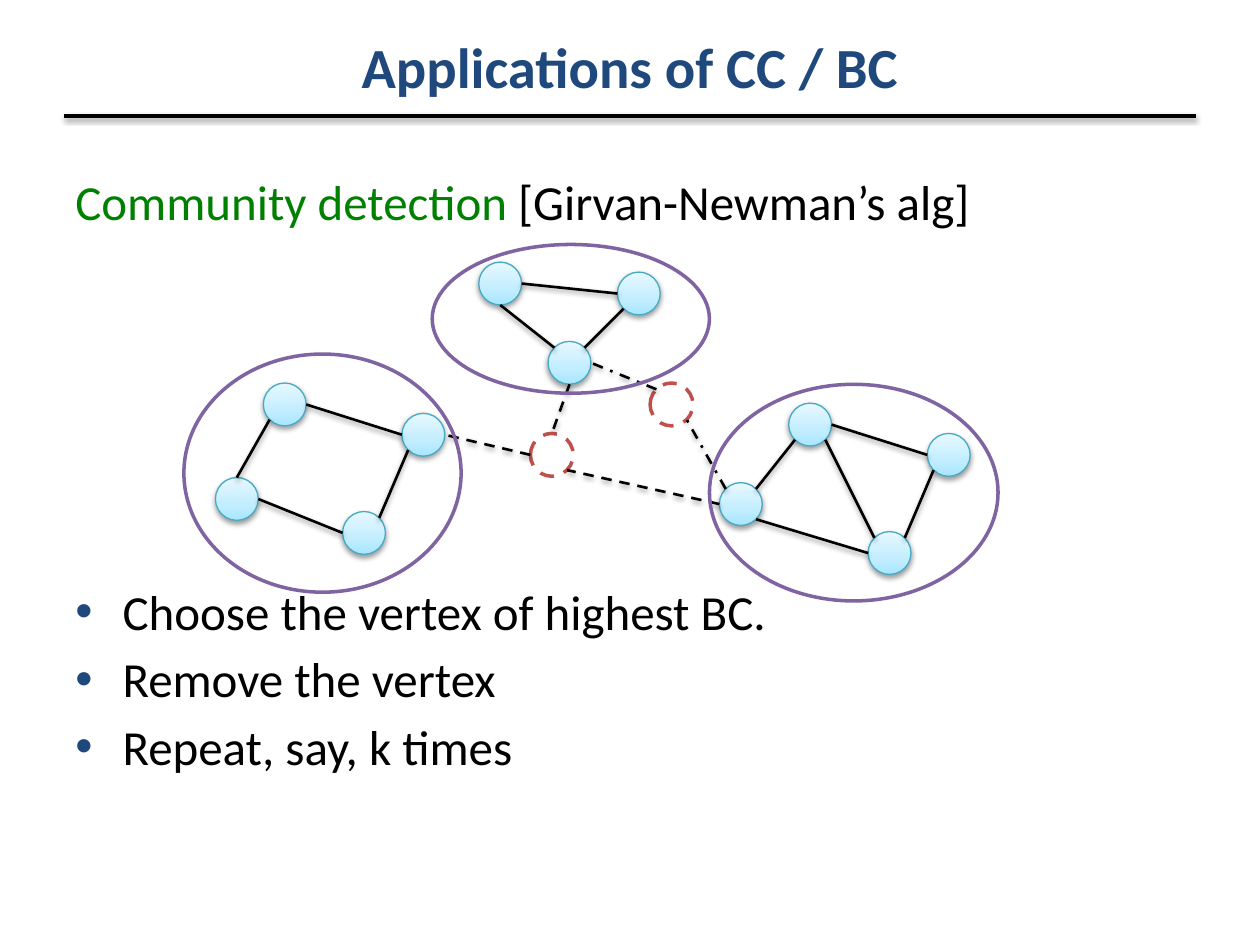
from math import cos, radians, sin

from pptx import Presentation
from pptx.dml.color import RGBColor
from pptx.enum.dml import MSO_LINE
from pptx.enum.shapes import MSO_CONNECTOR, MSO_SHAPE
from pptx.enum.text import MSO_ANCHOR, PP_ALIGN
from pptx.oxml import parse_xml
from pptx.oxml.ns import nsdecls
from pptx.util import Pt

NAVY = RGBColor(0x1F, 0x49, 0x7D)
GREEN = RGBColor(0x00, 0x80, 0x00)
BLACK = RGBColor(0x00, 0x00, 0x00)
WHITE = RGBColor(0xFF, 0xFF, 0xFF)
TEAL = RGBColor(0x46, 0xAA, 0xC5)
RED = RGBColor(0xC0, 0x50, 0x4D)
PURPLE = RGBColor(0x80, 0x64, 0xA2)
SKY_STOPS = (
    (0, RGBColor(0xA7, 0xE6, 0xFF)),
    (35, RGBColor(0xC1, 0xED, 0xFF)),
    (100, RGBColor(0xE7, 0xF8, 0xFF)),
)

DIAMETER = 24.5
COMPASS = {"E": 0, "SE": 45, "S": 90, "SW": 135, "W": 180, "NW": 225, "N": 270, "NE": 315}

VERTICES = {
    "left_low": (123.1, 272.9),
    "left_bottom": (195.8, 292.3),
    "left_top": (150.5, 218.9),
    "left_gate": (229.7, 236.2),
    "top_left": (273.6, 149.8),
    "top_right": (352.8, 155.5),
    "top_gate": (313.2, 195.1),
    "right_gate": (411.1, 275.8),
    "right_bottom": (496.1, 303.8),
    "right_top": (450.7, 230.4),
    "right_east": (529.9, 247.7),
}
REMOVED = {"middle": (303.1, 247.7), "upper": (371.5, 218.9)}
EDGES = {
    MSO_LINE.SOLID: (
        ("left_low", "E", "left_bottom", "W"),
        ("left_top", "SW", "left_low", "N"),
        ("left_top", "E", "left_gate", "W"),
        ("left_gate", "SW", "left_bottom", "NE"),
        ("top_gate", "NW", "top_left", "S"),
        ("top_right", "W", "top_left", "E"),
        ("top_right", "SW", "top_gate", "NE"),
        ("right_gate", "SE", "right_bottom", "W"),
        ("right_top", "SW", "right_gate", "NE"),
        ("right_top", "E", "right_east", "W"),
        ("right_east", "SW", "right_bottom", "NE"),
        ("right_bottom", "NW", "right_top", "SE"),
    ),
    MSO_LINE.DASH: (
        ("top_gate", "S", "middle", "N"),
        ("right_gate", "W", "middle", "SE"),
        ("middle", "W", "left_gate", "E"),
    ),
    MSO_LINE.DASH_DOT: (
        ("upper", "NW", "top_gate", "E"),
        ("right_gate", "NW", "upper", "SE"),
    ),
}
COMMUNITIES = (
    (105.1, 202.3, 158.4, 136.1),
    (247, 139.7, 158.4, 85),
    (405.4, 219.6, 164.9, 123.8),
)
STEPS = ("Choose the vertex of highest BC.", "Remove the vertex", "Repeat, say, k times")


class SlideBuilder:
    font = "Calibri"
    body_size = 28

    def __init__(self, page):
        self.page = page

    def add_shadow(self, shape):
        shape._element.spPr.append(parse_xml(
            f'<a:effectLst {nsdecls("a")}><a:outerShdw blurRad="39370" dist="20320" '
            'dir="5400000" rotWithShape="0"><a:srgbClr val="000000">'
            '<a:alpha val="38000"/></a:srgbClr></a:outerShdw></a:effectLst>'))

    def add_text(self, left, top, width, height):
        box = self.page.shapes.add_textbox(Pt(left), Pt(top), Pt(width), Pt(height))
        box.text_frame.word_wrap = True
        return box.text_frame

    def style_span(self, span, size, color, bold=False):
        span.font.name = self.font
        span.font.size = Pt(size)
        span.font.color.rgb = color
        span.font.bold = bold

    def add_title(self, text):
        frame = self.add_text(36, 15.8, 648, 43.9)
        frame.text = text
        frame.vertical_anchor = MSO_ANCHOR.MIDDLE
        para = frame.paragraphs[0]
        para.alignment = PP_ALIGN.CENTER
        self.style_span(para.runs[0], 32.4, NAVY, True)

    def add_body(self, heading, steps):
        frame = self.add_text(36, 94.3, 648, 388.1)
        para = frame.paragraphs[0]
        for text, color in heading:
            span = para.add_run()
            span.text = text
            self.style_span(span, self.body_size, color)
        for index, step in enumerate(steps):
            para = frame.add_paragraph()
            para.text = step
            para.space_before = Pt(5 if index else 200.7)
            self.style_span(para.runs[0], self.body_size, BLACK)
            self.add_bullet(para)

    def add_bullet(self, para):
        properties = para._p.get_or_add_pPr()
        properties.set("marL", str(Pt(27)))
        properties.set("indent", str(Pt(-27)))
        for xml in (
            f'<a:buClr {nsdecls("a")}><a:srgbClr val="{NAVY}"/></a:buClr>',
            f'<a:buFont {nsdecls("a")} typeface="Arial"/>',
            f'<a:buChar {nsdecls("a")} char="•"/>',
        ):
            properties.append(parse_xml(xml))

    def add_line(self, start, end, width=1.5, dash=MSO_LINE.SOLID):
        line = self.page.shapes.add_connector(
            MSO_CONNECTOR.STRAIGHT, *(Pt(value) for value in (*start, *end)))
        line.line.color.rgb = BLACK
        line.line.width = Pt(width)
        line.line.dash_style = dash
        self.add_shadow(line)

    def add_ellipse(self, left, top, width, height, color, line_width=2):
        ellipse = self.page.shapes.add_shape(
            MSO_SHAPE.OVAL, Pt(left), Pt(top), Pt(width), Pt(height))
        ellipse.fill.background()
        ellipse.line.color.rgb = color
        ellipse.line.width = Pt(line_width)
        return ellipse

    def add_community(self, left, top, width, height):
        self.add_ellipse(left, top, width, height, PURPLE).shadow.inherit = False

    def add_vertex(self, left, top):
        vertex = self.add_ellipse(left, top, DIAMETER, DIAMETER, TEAL, 0.75)
        stops = "".join(
            f'<a:gs pos="{position * 1000}"><a:srgbClr val="{color}"/></a:gs>'
            for position, color in SKY_STOPS)
        properties = vertex._element.spPr
        properties.replace(properties.find("{*}noFill"), parse_xml(
            f'<a:gradFill {nsdecls("a")} rotWithShape="1"><a:gsLst>{stops}</a:gsLst>'
            '<a:lin ang="16200000" scaled="0"/></a:gradFill>'))
        self.add_shadow(vertex)

    def add_removed_vertex(self, left, top):
        vertex = self.add_ellipse(left, top, DIAMETER, DIAMETER, RED)
        vertex.fill.solid()
        vertex.fill.fore_color.rgb = WHITE
        vertex.line.dash_style = MSO_LINE.DASH
        vertex.shadow.inherit = False


def rim_point(name, direction):
    left, top = (VERTICES | REMOVED)[name]
    angle = radians(COMPASS[direction])
    radius = DIAMETER / 2
    return left + radius * (1 + cos(angle)), top + radius * (1 + sin(angle))


def main():
    deck = Presentation()
    deck.slide_width, deck.slide_height = Pt(720), Pt(540)
    builder = SlideBuilder(deck.slides.add_slide(deck.slide_layouts[6]))
    builder.add_line((36.7, 66.2), (683.3, 66.2), width=2)
    builder.add_title("Applications of CC / BC")
    builder.add_body(
        (("Community detection", GREEN), (" [Girvan-Newman’s alg]", BLACK)), STEPS)
    for position in VERTICES.values():
        builder.add_vertex(*position)
    for position in REMOVED.values():
        builder.add_removed_vertex(*position)
    for dash, edges in EDGES.items():
        for start, start_side, end, end_side in edges:
            builder.add_line(
                rim_point(start, start_side), rim_point(end, end_side), dash=dash)
    for community in COMMUNITIES:
        builder.add_community(*community)
    deck.save("out.pptx")


if __name__ == "__main__":
    main()
